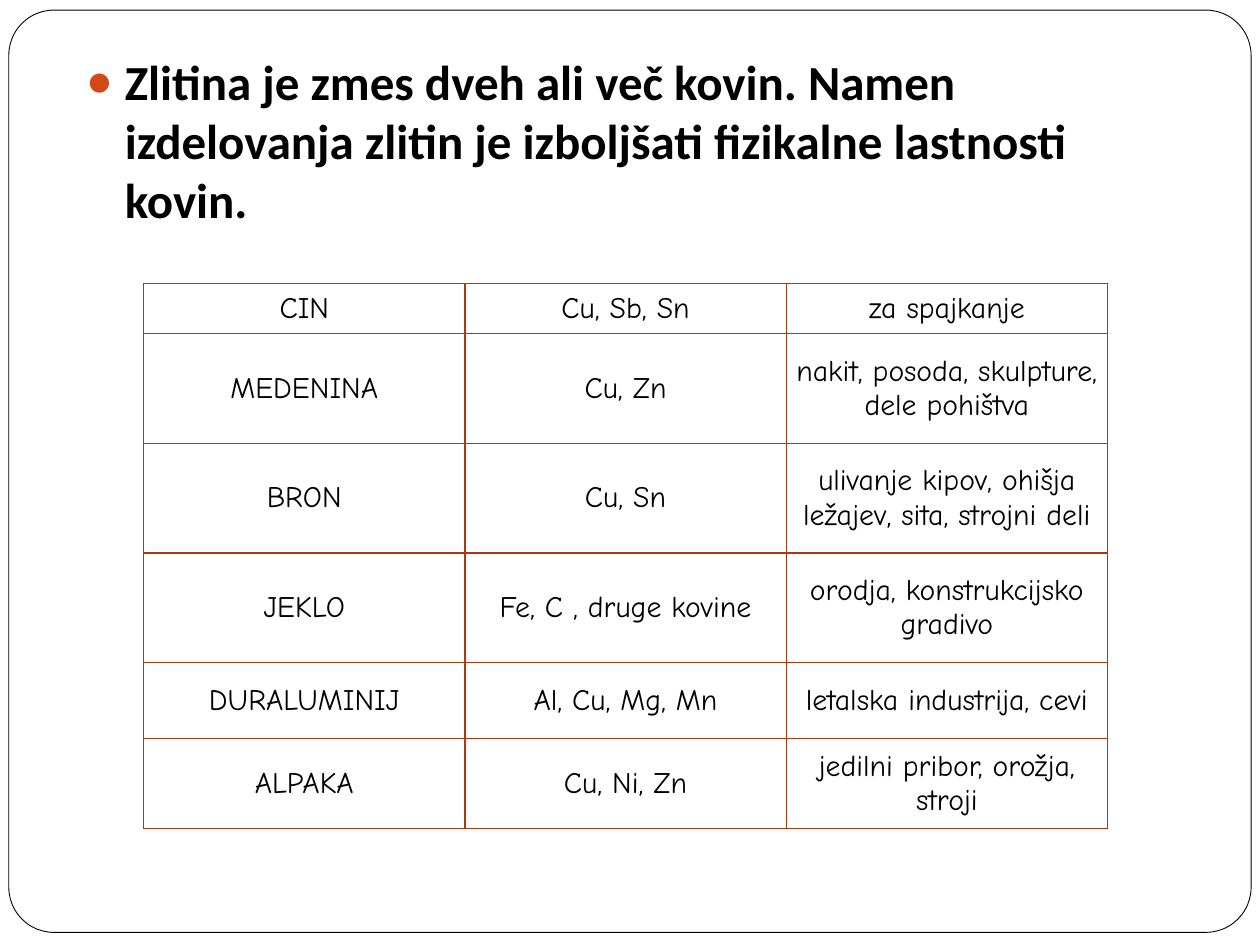
from dataclasses import dataclass

from lxml.etree import SubElement
from pptx import Presentation
from pptx.dml.color import RGBColor
from pptx.enum.shapes import MSO_SHAPE
from pptx.enum.text import MSO_ANCHOR, MSO_AUTO_SIZE, PP_ALIGN
from pptx.oxml.ns import qn
from pptx.util import Inches, Pt

BLACK, WHITE, ACCENT, RULE = "000000", "FFFFFF", "D34817", "B1360B"


@dataclass
class Alloy:
    name: str
    metals: str
    use: str
    height: float


ALLOYS = [
    Alloy("CIN", "Cu, Sb, Sn", "za spajkanje", 0.4),
    Alloy("MEDENINA", "Cu, Zn", "nakit, posoda, skulpture, dele pohištva", 0.87),
    Alloy("BRON", "Cu, Sn", "ulivanje kipov, ohišja ležajev, sita, strojni deli", 0.87),
    Alloy("JEKLO", "Fe, C , druge kovine", "orodja, konstrukcijsko gradivo", 0.87),
    Alloy("DURALUMINIJ", "Al, Cu, Mg, Mn", "letalska industrija, cevi", 0.6),
    Alloy("ALPAKA", "Cu, Ni, Zn", "jedilni pribor, orožja, stroji", 0.72),
]


def color(code: str) -> RGBColor:
    return RGBColor.from_string(code)


def apply(item, values: dict) -> None:
    for key, value in values.items():
        setattr(item, key, value)


def style(run, face: str, size: float, bold: bool = False) -> None:
    apply(run.font, {"name": face, "size": Pt(size), "bold": bold})
    run.font.color.rgb = color(BLACK)


def add_node(parent, tag: str, **values: str):
    return SubElement(parent, qn(tag), values)


def add_bullet(para, indent: float) -> None:
    props = para._p.get_or_add_pPr()
    props.set("marL", str(Inches(indent)))
    props.set("indent", str(-Inches(indent)))
    add_node(add_node(props, "a:buClr"), "a:srgbClr", val=ACCENT)
    add_node(props, "a:buSzPct", val="85000")
    add_node(props, "a:buFont", typeface="Calibri")
    add_node(props, "a:buChar", char="●")


def add_border(cell) -> None:
    props = cell._tc.get_or_add_tcPr()
    for side in "LRTB":
        line = add_node(props, f"a:ln{side}", w=str(Pt(0.75)))
        add_node(add_node(line, "a:solidFill"), "a:srgbClr", val=RULE)


def fill_cell(cell, text: str) -> None:
    gap = Inches(0.03)
    apply(cell, {
        "margin_left": gap, "margin_right": gap,
        "margin_top": gap, "margin_bottom": gap,
        "vertical_anchor": MSO_ANCHOR.MIDDLE,
    })
    add_border(cell)
    cell.fill.background()
    para = cell.text_frame.paragraphs[0]
    para.alignment = PP_ALIGN.CENTER
    run = para.add_run()
    run.text = text
    style(run, "Comic Neue", 17)


def add_alloys(slide, left: float, top: float, width: float) -> None:
    height = sum(alloy.height for alloy in ALLOYS)
    table = slide.shapes.add_table(
        len(ALLOYS), 3, Inches(left), Inches(top), Inches(width), Inches(height)
    ).table
    apply(table, {"first_row": False, "horz_banding": False})
    for row, alloy in zip(table.rows, ALLOYS):
        row.height = Inches(alloy.height)
        for cell, text in zip(row.cells, (alloy.name, alloy.metals, alloy.use)):
            fill_cell(cell, text)


def add_frame(slide):
    frame = slide.shapes.add_shape(
        MSO_SHAPE.ROUNDED_RECTANGLE,
        Inches(0.07), Inches(0.08), Inches(9.86), Inches(7.32),
    )
    frame.adjustments[0] = 0.049
    frame.shadow.inherit = False
    frame.fill.solid()
    frame.fill.fore_color.rgb = color(WHITE)
    frame.line.color.rgb = color(BLACK)
    frame.line.width = Pt(0.5)
    return frame


def fill_body(body, text: str) -> None:
    apply(body, {
        "left": Inches(0.59), "top": Inches(0.36),
        "width": Inches(8.5), "height": Inches(1.57),
    })
    apply(body.text_frame, {
        "word_wrap": True, "auto_size": MSO_AUTO_SIZE.NONE,
        "vertical_anchor": MSO_ANCHOR.TOP,
    })
    para = body.text_frame.paragraphs[0]
    para.space_before = Pt(5.8)
    add_bullet(para, 0.3)
    run = para.add_run()
    run.text = text
    style(run, "Calibri", 28, True)


def main() -> None:
    deck = Presentation()
    apply(deck, {"slide_width": Inches(10), "slide_height": Inches(7.5)})
    slide = deck.slides.add_slide(deck.slide_layouts[1])

    # The slide has no title
    title = slide.shapes.title._element
    title.getparent().remove(title)

    # Definition, in front of the rounded frame
    body = slide.placeholders[1]
    body._element.addprevious(add_frame(slide)._element)
    fill_body(body, "Zlitina je zmes dveh ali več kovin. Namen izdelovanja "
                    "zlitin je izboljšati fizikalne lastnosti kovin.")

    # Alloys with their metals and uses
    add_alloys(slide, 1.14, 2.25, 7.65)
    deck.save("out.pptx")


if __name__ == "__main__":
    main()
